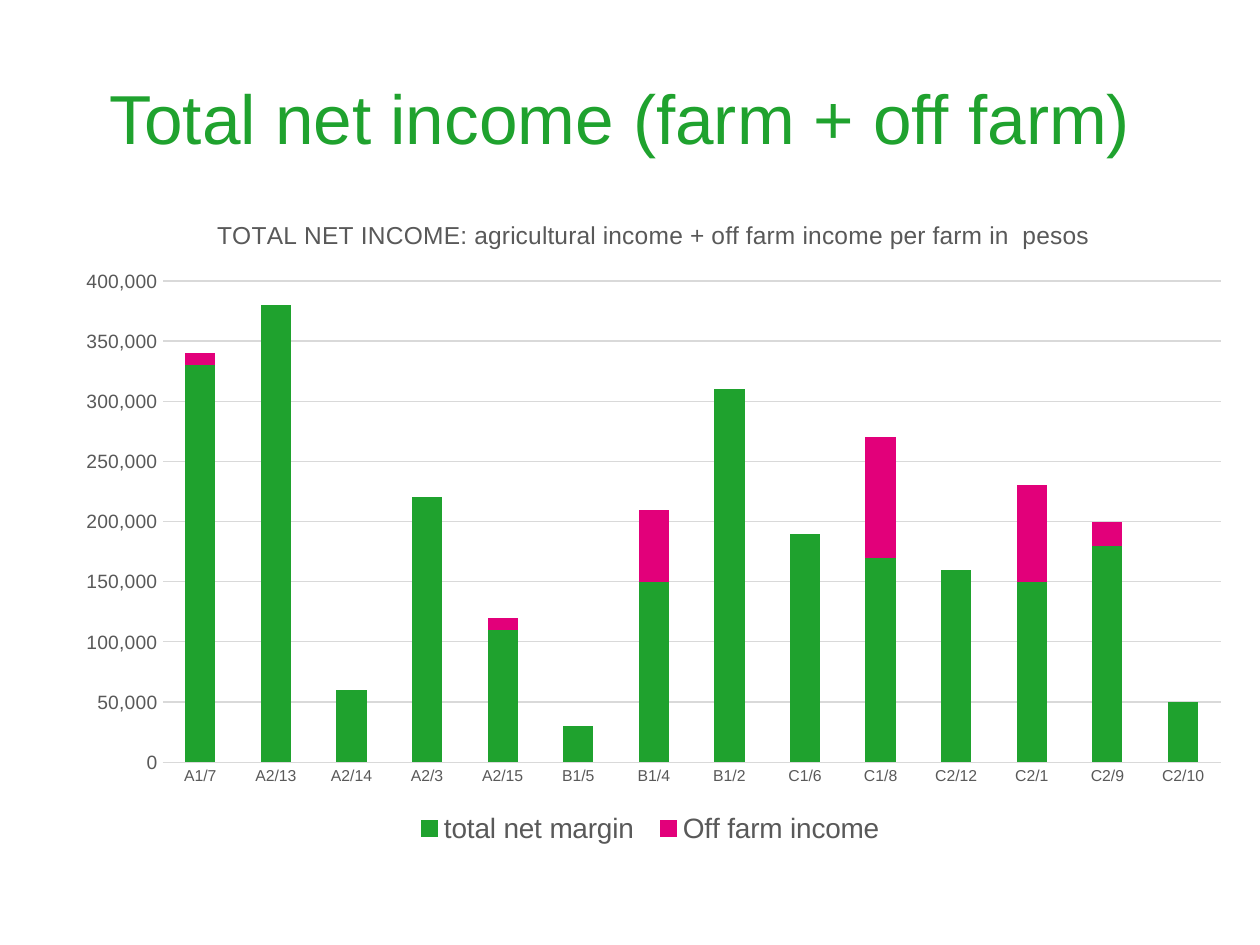
"""Build a slide with a stacked column chart of net income per farm."""
from lxml import etree
from pptx import Presentation
from pptx.chart.data import CategoryChartData
from pptx.dml.color import RGBColor
from pptx.enum import chart as ch, text
from pptx.oxml.ns import qn
from pptx.util import Inches, Pt

TITLE = "Total net income (farm + off farm) "
CHART_TITLE = "TOTAL NET INCOME: agricultural income + off farm income per farm in  pesos"
FARMS = [
    ("A1/7", 330000, 10000), ("A2/13", 380000, None), ("A2/14", 60000, None),
    ("A2/3", 220000, 0), ("A2/15", 110000, 10000), ("B1/5", 30000, None),
    ("B1/4", 150000, 60000), ("B1/2", 310000, None), ("C1/6", 190000, None),
    ("C1/8", 170000, 100000), ("C2/12", 160000, None), ("C2/1", 150000, 80000),
    ("C2/9", 180000, 20000), ("C2/10", 50000, None),
]
SERIES = [("total net margin ", "green"), ("Off farm income ", "pink")]
COLORS = {"green": "1FA22E", "pink": "E2007A", "grey": "595959", "rule": "D9D9D9"}
CHART_W, CHART_H = 9.38, 5.19
PLOT = {"x": 0.79 / CHART_W, "y": 0.68 / CHART_H,
        "w": 8.4 / CHART_W, "h": 3.82 / CHART_H}


def rgb(name):
    return RGBColor.from_string(COLORS[name])


def style(font, size, color="grey"):
    font.name, font.size, font.bold = "Arial", Pt(size), False
    font.color.rgb = rgb(color)


def write(tf, value, size, color="grey", align=text.PP_ALIGN.CENTER):
    p = tf.paragraphs[0]
    p.alignment = align
    r = p.add_run()
    r.text = value
    style(r.font, size, color)


def rule(line):
    line.color.rgb = rgb("rule")
    line.width = Pt(0.75)


def place_plot(chart):
    area = chart._chartSpace.find(".//" + qn("c:plotArea"))
    for old in area.findall(qn("c:layout")):
        area.remove(old)
    layout = etree.Element(qn("c:layout"))
    manual = etree.SubElement(layout, qn("c:manualLayout"))
    modes = {"layoutTarget": "inner", "xMode": "edge", "yMode": "edge"}
    for tag, value in {**modes, **PLOT}.items():
        etree.SubElement(manual, qn("c:" + tag)).set("val", str(value))
    area.insert(0, layout)


def add_income_chart(s):
    data = CategoryChartData(number_format="#,##0")
    names, *columns = zip(*FARMS)
    data.categories = names
    for (name, _), values in zip(SERIES, columns):
        data.add_series(name, values)
    chart = s.shapes.add_chart(
        ch.XL_CHART_TYPE.COLUMN_STACKED, Inches(0.5), Inches(1.55),
        Inches(CHART_W), Inches(CHART_H), data).chart
    chart.font.name, chart.font.size = "Arial", Pt(10)
    chart.has_title = True
    write(chart.chart_title.text_frame, CHART_TITLE, 14)
    chart.chart_title.include_in_layout = False

    plot = chart.plots[0]
    plot.gap_width, plot.overlap, plot.vary_by_categories = 150, 100, False
    for series, (_, color) in zip(plot.series, SERIES):
        series.format.fill.solid()
        series.format.fill.fore_color.rgb = rgb(color)
        series.invert_if_negative = False

    for axis, size in ((chart.category_axis, 9), (chart.value_axis, 11)):
        axis.major_tick_mark = axis.minor_tick_mark = ch.XL_TICK_MARK.NONE
        style(axis.tick_labels.font, size)
    rule(chart.category_axis.format.line)
    axis = chart.value_axis
    axis.minimum_scale, axis.maximum_scale, axis.major_unit = 0, 400000, 50000
    axis.tick_labels.number_format = "#,##0"
    axis.tick_labels.number_format_is_linked = False
    axis.format.line.fill.background()
    axis.has_major_gridlines = True
    rule(axis.major_gridlines.format.line)

    chart.has_legend = True
    chart.legend.position = ch.XL_LEGEND_POSITION.BOTTOM
    chart.legend.include_in_layout = False
    style(chart.legend.font, 16)
    place_plot(chart)


def main():
    prs = Presentation()
    prs.slide_width, prs.slide_height = Inches(10), Inches(7.5)
    s = prs.slides.add_slide(prs.slide_layouts[5])
    sp = s.shapes.title
    sp.left, sp.top, sp.width, sp.height = map(Inches, (0.5, 0.3, 9, 1.25))
    tf = sp.text_frame
    tf.vertical_anchor = text.MSO_ANCHOR.MIDDLE
    tf.word_wrap = True
    write(tf, TITLE, 39.6, "green")
    add_income_chart(s)
    prs.save("out.pptx")


if __name__ == "__main__":
    main()
